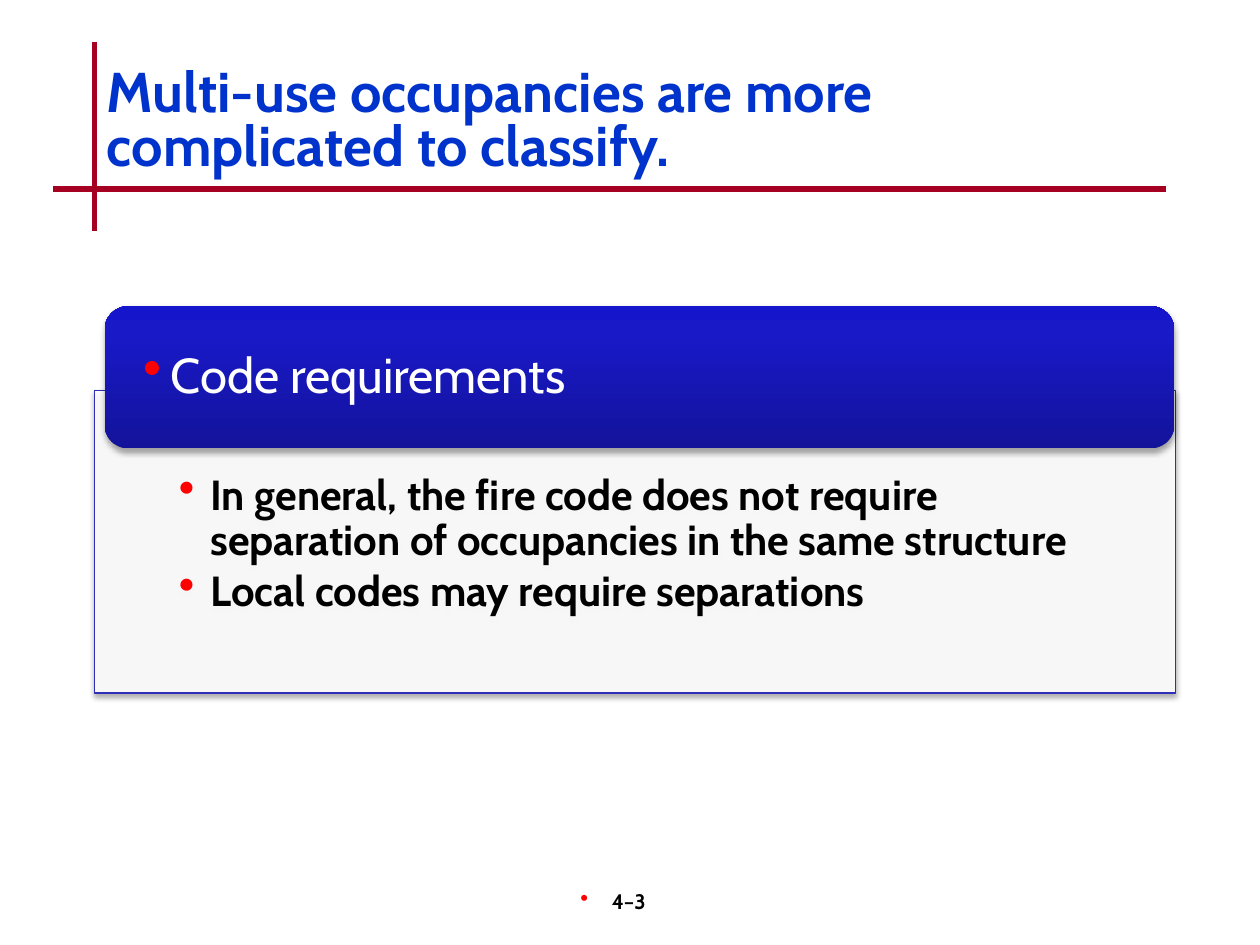
from dataclasses import dataclass

from lxml.etree import SubElement
from pptx import Presentation
from pptx.dml.color import RGBColor
from pptx.enum.shapes import MSO_CONNECTOR, MSO_SHAPE
from pptx.enum.text import MSO_ANCHOR, PP_ALIGN
from pptx.oxml.ns import qn
from pptx.util import Inches, Pt

TITLE = "Multi-use occupancies are more complicated to classify."
HEADING = "Code requirements"
POINTS = [
    "In general, the fire code does not require separation of occupancies in the same structure",
    "Local codes may require separations",
]
PAGE_NUMBER = "4–3"
RULES = [(0.75, 0.33, 0.75, 1.83), (0.42, 1.5, 9.25, 1.5)]
TITLE_BOX = (0.75, 0.48, 8.5, 1)
PANEL_BOX = (0.75, 3.1, 8.58, 2.4)
HEADING_BOX = (0.83, 2.43, 8.49, 1.13)
PAGE_NUMBER_BOX = (3.92, 7, 2.08, 0.5)


@dataclass(frozen=True)
class Theme:
    font: str = "Cabin"
    title: str = "0033CC"
    rule: str = "A50021"
    text: str = "000000"
    light: str = "FFFFFF"
    bullet: str = "FF0000"
    panel_line: str = "2E2EB9"
    gradient: tuple = ((0, "13139A"), (80, "1919C8"), (100, "1515CC"))
    title_size: int = 32
    heading_size: int = 28
    point_size: int = 24
    page_size: int = 12


THEME = Theme()


def add_element(parent, tag, **attributes):
    return SubElement(parent, qn(tag), {key: str(value) for key, value in attributes.items()})


def add_bullet(paragraph, indent, right=0):
    properties = paragraph._p.get_or_add_pPr()
    properties.set("marL", str(Inches(indent)))
    properties.set("marR", str(Inches(right)))
    properties.set("indent", str(Inches(-indent)))
    add_element(add_element(properties, "a:buClr"), "a:srgbClr", val=THEME.bullet)
    add_element(properties, "a:buSzPct", val=110000)
    add_element(properties, "a:buChar", char="•")


def add_run(paragraph, text, size, color, bold=True):
    run = paragraph.add_run()
    run.text = text
    run.font.name = THEME.font
    run.font.size = Pt(size)
    run.font.bold = bold
    run.font.color.rgb = RGBColor.from_string(color)


def set_frame(shape, anchor, insets=(0.1, 0.05, 0.1, 0.05)):
    frame = shape.text_frame
    frame.word_wrap = True
    frame.vertical_anchor = anchor
    frame.margin_left, frame.margin_top, frame.margin_right, frame.margin_bottom = map(Inches, insets)
    return frame


def add_text_box(slide, box, anchor):
    return set_frame(slide.shapes.add_textbox(*map(Inches, box)), anchor)


def add_card(slide, kind, box):
    shape = slide.shapes.add_shape(kind, *map(Inches, box))
    shape.shadow.inherit = False
    effects = shape._element.spPr.find(qn("a:effectLst"))
    shadow = add_element(effects, "a:outerShdw", blurRad=Pt(3.1), dist=Pt(1.8), dir=5400000, rotWithShape=0)
    add_element(add_element(shadow, "a:srgbClr", val="000000"), "a:alpha", val=35000)
    return shape


def add_rule(slide, ends):
    rule = slide.shapes.add_connector(MSO_CONNECTOR.STRAIGHT, *map(Inches, ends))
    rule.line.color.rgb = RGBColor.from_string(THEME.rule)
    rule.line.width = Pt(3)
    add_element(rule._element.spPr, "a:effectLst")


def add_panel(slide):
    panel = add_card(slide, MSO_SHAPE.RECTANGLE, PANEL_BOX)
    panel.fill.solid()
    panel.fill.fore_color.rgb = RGBColor.from_string(THEME.light)
    color = panel._element.spPr.find(qn("a:solidFill")).find(qn("a:srgbClr"))
    add_element(color, "a:alpha", val=90000)
    panel.line.color.rgb = RGBColor.from_string(THEME.panel_line)
    panel.line.width = Pt(0.75)
    frame = set_frame(panel, MSO_ANCHOR.TOP, (0.67, 0.66, 0.67, 0.19))
    for index, point in enumerate(POINTS):
        paragraph = frame.add_paragraph() if index else frame.paragraphs[0]
        add_bullet(paragraph, 0.25)
        paragraph.alignment = PP_ALIGN.LEFT
        paragraph.line_spacing = 0.9
        paragraph.space_after = Pt(0.15 * THEME.point_size)
        add_run(paragraph, point, THEME.point_size, THEME.text)


def add_heading(slide):
    heading = add_card(slide, MSO_SHAPE.ROUNDED_RECTANGLE, HEADING_BOX)
    heading.line.fill.background()
    heading.fill.gradient()
    heading.fill.gradient_angle = 90
    stops = heading._element.spPr.find(qn("a:gradFill")).find(qn("a:gsLst"))
    stops.clear()
    for position, color in THEME.gradient:
        add_element(add_element(stops, "a:gs", pos=position * 1000), "a:srgbClr", val=color)
    paragraph = set_frame(heading, MSO_ANCHOR.MIDDLE, (0.25, 0, 0.25, 0)).paragraphs[0]
    add_bullet(paragraph, 0.22)
    paragraph.alignment = PP_ALIGN.LEFT
    paragraph.line_spacing = 0.9
    add_run(paragraph, HEADING, THEME.heading_size, THEME.light, bold=False)


def main():
    """Build the occupancy classification slide."""
    presentation = Presentation()
    presentation.slide_width, presentation.slide_height = Inches(10), Inches(7.5)
    slide = presentation.slides.add_slide(presentation.slide_layouts[6])
    for ends in RULES:
        add_rule(slide, ends)

    page_number = add_text_box(slide, PAGE_NUMBER_BOX, MSO_ANCHOR.TOP).paragraphs[0]
    add_bullet(page_number, 0.25, right=0.19)
    page_number.alignment = PP_ALIGN.CENTER
    add_run(page_number, PAGE_NUMBER, THEME.page_size, THEME.text)

    title = add_text_box(slide, TITLE_BOX, MSO_ANCHOR.MIDDLE).paragraphs[0]
    title.line_spacing = 0.8
    add_run(title, TITLE, THEME.title_size, THEME.title)

    add_panel(slide)
    add_heading(slide)
    presentation.save("out.pptx")


if __name__ == "__main__":
    main()
